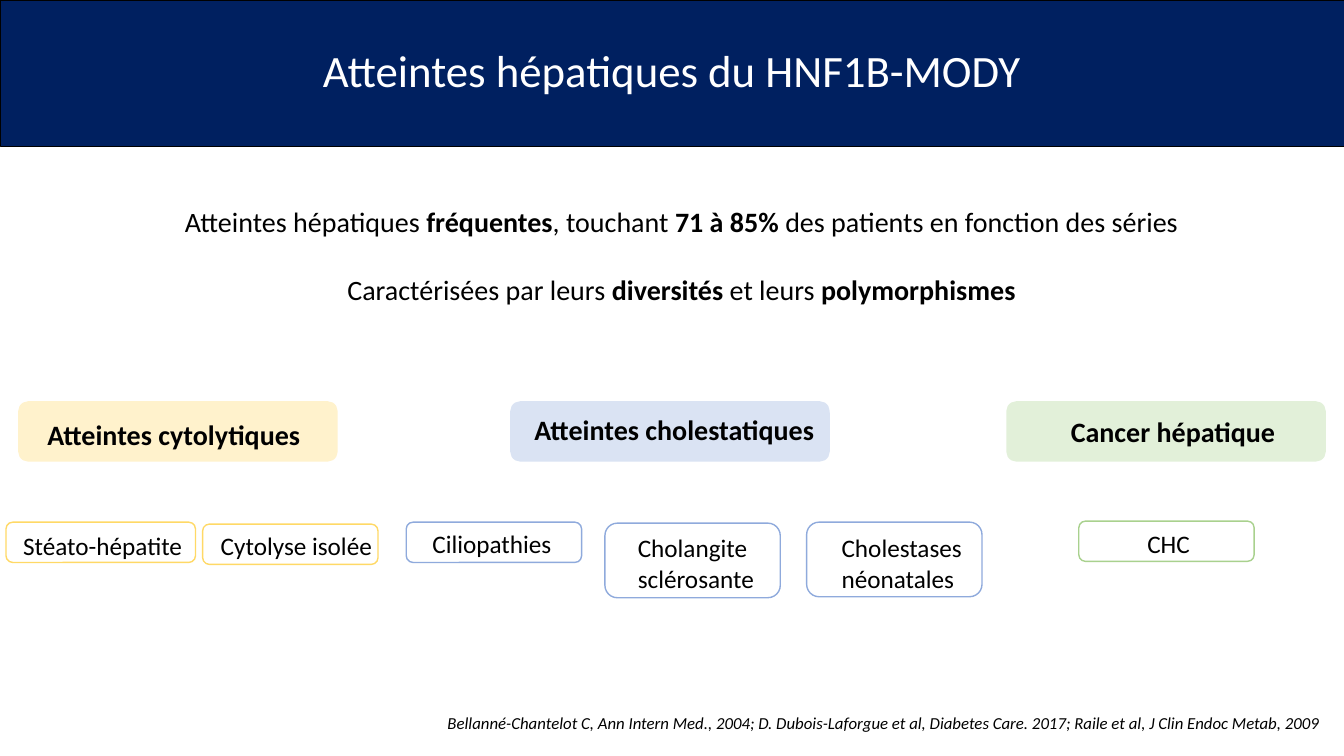
from pptx import Presentation
from pptx import util as u
from pptx.dml.color import RGBColor
from pptx.enum import shapes, text


def rgb(value):
    return RGBColor.from_string(value)


def apply(target, values):
    for name, value in values.items():
        setattr(target, name, value)


class Deck:
    font = "Calibri"
    ink = "000000"

    def __init__(self, width, height):
        self.prs = Presentation()
        self.prs.slide_width = u.Inches(width)
        self.prs.slide_height = u.Inches(height)
        self.s = self.prs.slides.add_slide(self.prs.slide_layouts[6])

    def x(self, share):
        return round(self.prs.slide_width * share / 100)

    def y(self, share):
        return round(self.prs.slide_height * share / 100)

    def area(self, left, top, width, height):
        return self.x(left), self.y(top), self.x(width), self.y(height)

    def fill_text(self, sp, paragraphs, size, color=ink, frame=None, para=None, **font):
        tf = sp.text_frame
        apply(tf, {"word_wrap": True, "vertical_anchor": text.MSO_ANCHOR.TOP, **(frame or {})})
        for i, runs in enumerate(paragraphs):
            p = tf.add_paragraph() if i else tf.paragraphs[0]
            apply(p, {"alignment": text.PP_ALIGN.LEFT, **(para or {})})
            for words, bold in runs:
                r = p.add_run()
                r.text = words
                apply(r.font, {"name": self.font, "size": u.Pt(size), "bold": bold, **font})
                r.font.color.rgb = rgb(color)

    def box(self, area, fill=None, line=None, weight=1, kind=shapes.MSO_SHAPE.ROUNDED_RECTANGLE):
        sp = self.s.shapes.add_shape(kind, *self.area(*area))
        sp.shadow.inherit = False
        if fill:
            sp.fill.solid()
            sp.fill.fore_color.rgb = rgb(fill)
        else:
            sp.fill.background()
        if line:
            sp.line.color.rgb = rgb(line)
            sp.line.width = u.Pt(weight)
        else:
            sp.line.fill.background()
        return sp

    def label(self, area, words, inset, size, bold=False, fill=None, line=None):
        left, top = inset
        sp = self.box(area, fill, line)
        frame = {"margin_left": self.x(left), "margin_top": self.y(top),
                 "margin_right": 0, "margin_bottom": 0}
        self.fill_text(sp, [[(words, bold)]], size, frame=frame)

    def title(self, area, words, fill):
        sp = self.box(area, fill, self.ink, 0.5, shapes.MSO_SHAPE.RECTANGLE)
        self.fill_text(sp, [[(words, False)]], 32, "FFFFFF",
                       {"vertical_anchor": text.MSO_ANCHOR.MIDDLE},
                       {"alignment": text.PP_ALIGN.CENTER, "line_spacing": 0.9})

    def note(self, area, paragraphs, size, para=None, **font):
        sp = self.s.shapes.add_textbox(*self.area(*area))
        self.fill_text(sp, paragraphs, size, para=para, **font)


GROUPS = [
    ("Atteintes cytolytiques", 1.35, (1.95, 1.73), "FFF2CC"),
    ("Atteintes cholestatiques", 37.96, (1.58, 1.07), "DAE3F3"),
    ("Cancer hépatique", 74.87, (4.58, 1.33), "E2F0D9"),
]
YELLOW, BLUE, GREEN = "FFD966", "8FAADC", "A9D18E"
ONE_LINE, TWO_LINES = 5.33, 9.87
FORMS = [
    ("Stéato-hépatite", (0.45, 69.07, 14.1, ONE_LINE), (1.13, 0.8), YELLOW),
    ("Cytolyse isolée", (15.08, 69.33, 13.05, ONE_LINE), (1.2, 0.53), YELLOW),
    ("Ciliopathies", (30.23, 69.07, 13.05, ONE_LINE), (1.8, 0.53), BLUE),
    ("Cholangite sclérosante", (45.01, 69.2, 13.05, TWO_LINES), (2.18, 0.8), BLUE),
    ("Cholestases néonatales", (60.02, 69.07, 13.05, TWO_LINES), (2.33, 0.93), BLUE),
    ("CHC", (80.27, 68.93, 13.05, ONE_LINE), (4.95, 0.67), GREEN),
]
SUMMARY = [
    [("Atteintes hépatiques ", False), ("fréquentes", True), (", touchant ", False),
     ("71 à 85% ", True), ("des patients en fonction des séries", False)],
    [("Caractérisées par leurs ", False), ("diversités ", True), ("et leurs ", False),
     ("polymorphismes", True)],
]
SOURCES = ("Bellanné-Chantelot C, Ann Intern Med., 2004; D. Dubois-Laforgue et al, "
           "Diabetes Care. 2017; Raile et al, J Clin Endoc Metab, 2009")


def main():
    deck = Deck(13.33, 7.5)
    deck.title((0, 0, 100, 19.33), "Atteintes hépatiques du HNF1B-MODY", "002060")
    deck.note((4.05, 26.4, 93.32, 14.8), SUMMARY, 20,
              {"alignment": text.PP_ALIGN.CENTER, "space_after": u.Pt(24.4)})
    for words, left, inset, fill in GROUPS:
        deck.label((left, 53.07, 23.78, 8), words, inset, 20, True, fill=fill)
    for words, area, inset, line in FORMS:
        deck.label(area, words, inset, 18, line=line)
    deck.note((32.56, 93.6, 67.44, 4), [[(SOURCES, False)]], 12, italic=True)
    deck.prs.save("out.pptx")


if __name__ == "__main__":
    main()
